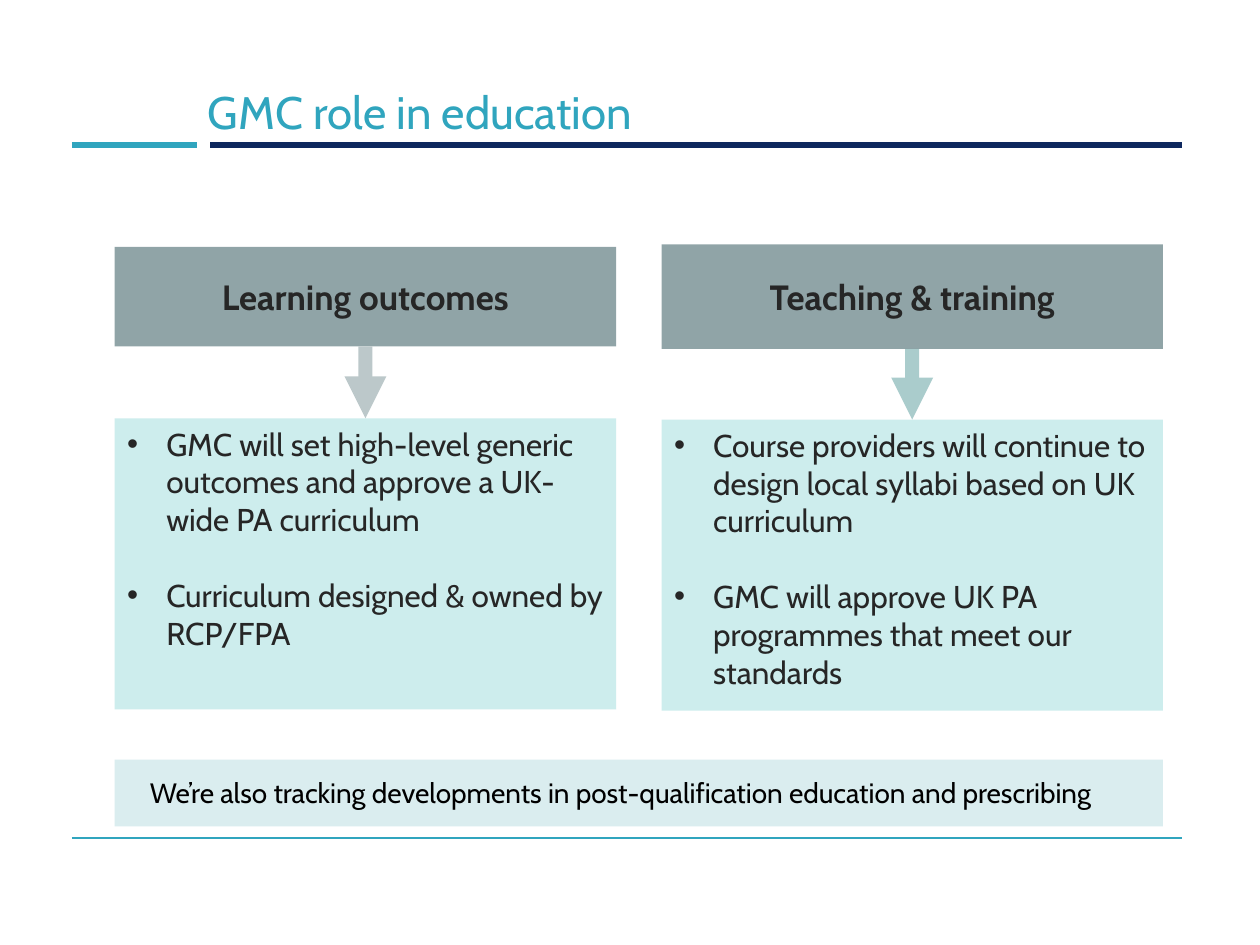
from dataclasses import dataclass

import pptx
import pptx.dml.color
import pptx.enum.shapes
import pptx.enum.text
import pptx.oxml.ns
import pptx.util
from lxml import etree

Inches = pptx.util.Inches
Pt = pptx.util.Pt
qn = pptx.oxml.ns.qn
ALIGN = pptx.enum.text.PP_ALIGN
ANCHOR = pptx.enum.text.MSO_ANCHOR


@dataclass(frozen=True)
class Theme:
    font: str = "Cabin"
    teal: str = "30A5BE"
    navy: str = "0E285E"
    heading_fill: str = "224B50"
    list_fill: str = "9CDCDC"
    note_fill: str = "DAEDEF"
    left_arrow: str = "7A9396"
    right_arrow: str = "569A9B"
    dark: str = "262626"
    black: str = "000000"
    title_size: int = 26
    heading_size: int = 20
    list_size: int = 18
    note_size: int = 16
    list_gap: float = 21.6


class SlideBuilder:
    def __init__(self, slide, theme):
        self.slide = slide
        self.theme = theme

    def colour(self, value):
        return pptx.dml.color.RGBColor.from_string(value)

    def place(self, shape, left, top, width, height):
        shape.left, shape.top = Inches(left), Inches(top)
        shape.width, shape.height = Inches(width), Inches(height)

    def paint(self, shape, fill, opacity=100):
        shape.fill.solid()
        shape.fill.fore_color.rgb = self.colour(fill)
        self.fade(shape, opacity)

    def fade(self, shape, opacity):
        if opacity < 100:
            for tone in shape._element.spPr.iter(qn("a:srgbClr")):
                etree.SubElement(tone, qn("a:alpha"), val=str(opacity * 1000))

    def set_text(self, paragraph, text, size, colour, bold=False, align=ALIGN.LEFT):
        paragraph.text = text
        paragraph.alignment = align
        paragraph.font.name = self.theme.font
        paragraph.font.size = Pt(size)
        paragraph.font.bold = bold
        paragraph.font.color.rgb = self.colour(colour)

    def frame(self, shape, anchor=ANCHOR.TOP):
        frame = shape.text_frame
        frame.word_wrap = True
        frame.auto_size = pptx.enum.text.MSO_AUTO_SIZE.NONE
        frame.vertical_anchor = anchor
        return frame

    def title(self, text, *box):
        title = self.slide.shapes.title
        self.place(title, *box)
        paragraph = self.frame(title, ANCHOR.MIDDLE).paragraphs[0]
        self.set_text(paragraph, text, self.theme.title_size, self.theme.teal)

    def panel(self, fill, opacity, *box):
        panel = self.slide.shapes.add_shape(
            pptx.enum.shapes.MSO_SHAPE.RECTANGLE, *map(Inches, box))
        panel.shadow.inherit = False
        panel.line.fill.background()
        self.paint(panel, fill, opacity)
        return panel

    def heading(self, text, *box):
        heading = self.panel(self.theme.heading_fill, 50, *box)
        paragraph = self.frame(heading, ANCHOR.MIDDLE).paragraphs[0]
        self.set_text(paragraph, text, self.theme.heading_size, self.theme.dark,
                      True, ALIGN.CENTER)
        return heading

    def bullets(self, index, points, *box):
        body = self.slide.placeholders[index]
        self.place(body, *box)
        self.paint(body, self.theme.list_fill, 50)
        frame = self.frame(body)
        for number, point in enumerate(points):
            paragraph = frame.add_paragraph() if number else frame.paragraphs[0]
            properties = paragraph._p.get_or_add_pPr()
            properties.set("marL", str(Inches(0.31)))
            properties.set("indent", str(Inches(-0.31)))
            etree.SubElement(properties, qn("a:buChar"), char="•")
            paragraph.space_before = Pt(self.theme.list_gap if number else 0)
            self.set_text(paragraph, point, self.theme.list_size, self.theme.dark)
        return body

    def rule(self, colour, weight, x1, y1, x2, y2):
        rule = self.slide.shapes.add_connector(
            pptx.enum.shapes.MSO_CONNECTOR.STRAIGHT,
            *map(Inches, (x1, y1, x2, y2)))
        rule.line.color.rgb = self.colour(colour)
        rule.line.width = Pt(weight)
        etree.SubElement(rule._element.spPr, qn("a:effectLst"))
        return rule

    def arrow(self, colour, heading, body):
        arrow = self.rule(colour, 8, 0, 0, 0, 0)
        arrow.begin_connect(heading, 2)
        arrow.end_connect(body, 0)
        self.fade(arrow, 50)
        etree.SubElement(arrow.line._get_or_add_ln(), qn("a:tailEnd"),
                         type="triangle")

    def note(self, text, *box):
        note = self.slide.shapes.add_textbox(*map(Inches, box))
        self.set_text(self.frame(note).paragraphs[0], text,
                      self.theme.note_size, self.theme.black)


def main():
    deck = pptx.Presentation()
    deck.slide_width, deck.slide_height = Inches(10), Inches(7.5)
    theme = Theme()
    page = SlideBuilder(deck.slides.add_slide(deck.slide_layouts[3]), theme)

    page.rule(theme.navy, 3, 1.67, 1.15, 9.38, 1.15)
    page.rule(theme.teal, 3, 0.57, 1.15, 1.56, 1.15)
    page.rule(theme.teal, 0.75, 0.57, 6.65, 9.38, 6.65)
    page.title("GMC role in education", 1.55, 0.52, 7.83, 0.73)

    column_width = 3.98
    columns = [
        (1, 0.91, 1.96, 0.79, 3.32, theme.left_arrow, "Learning outcomes",
         ["GMC will set high-level generic outcomes and approve a UK-wide PA curriculum",
          "Curriculum designed & owned by RCP/FPA"]),
        (2, 5.25, 1.94, 0.83, 3.33, theme.right_arrow, "Teaching & training",
         ["Course providers will continue to design local syllabi based on UK curriculum",
          "GMC will approve UK PA programmes that meet our standards"]),
    ]
    for index, left, top, height, list_top, arrow_colour, name, points in columns:
        heading = page.heading(name, left, top, column_width, height)
        body = page.bullets(index, points, left, list_top, column_width, 2.31)
        page.arrow(arrow_colour, heading, body)

    page.panel(theme.note_fill, 100, 0.91, 6.03, 8.32, 0.53)
    page.note("We’re also tracking developments in post-qualification education and prescribing",
              1.09, 6.11, 8.48, 0.37)
    deck.save("out.pptx")


if __name__ == "__main__":
    main()
